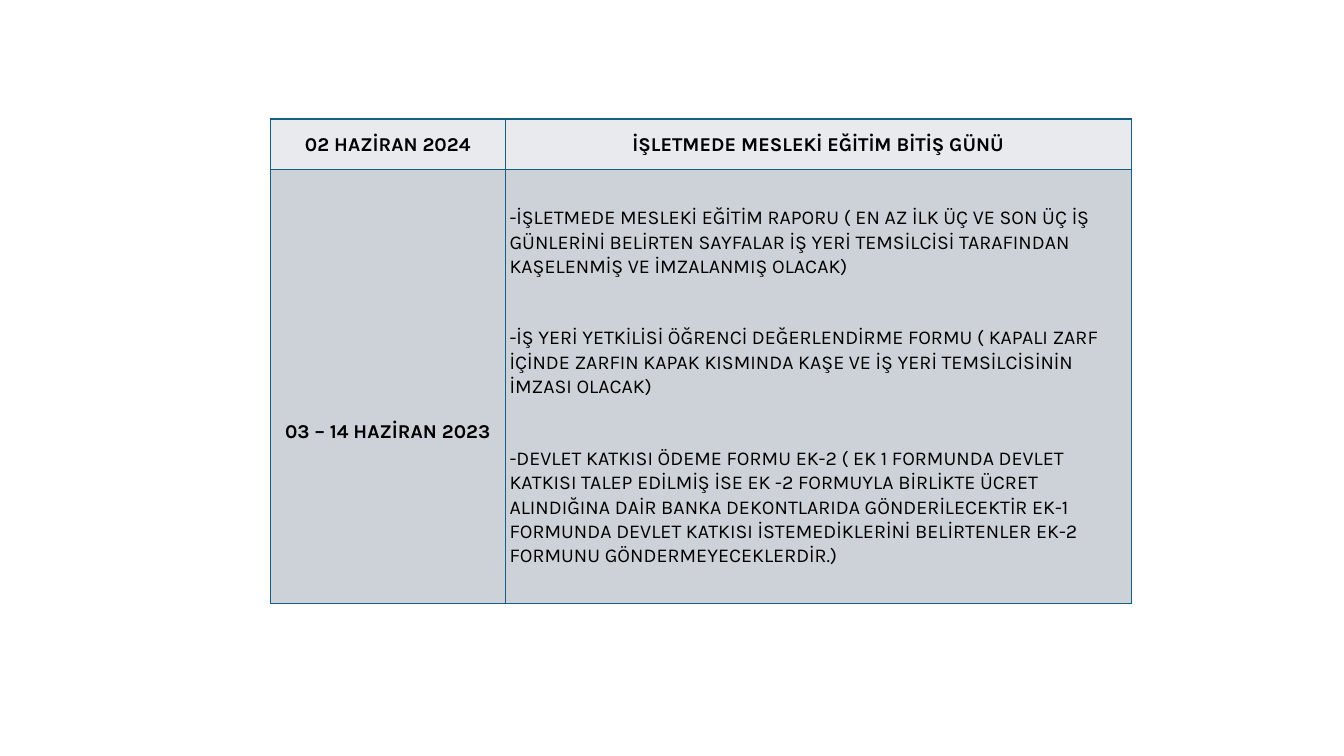
from lxml import etree
from pptx import Presentation
from pptx import util as u
from pptx.dml.color import RGBColor
from pptx.enum import text
from pptx.oxml.ns import qn

BLACK = RGBColor(0x00, 0x00, 0x00)
BORDER = RGBColor(0x15, 0x60, 0x82)
HEADER_FILL = RGBColor(0xE8, 0xEA, 0xED)
BODY_FILL = RGBColor(0xCC, 0xD2, 0xD8)

COLUMN_WIDTHS = (168, 447)
ROW_HEIGHTS = (36, 310)
DATE_TOP = 178.5
DOCUMENTS_TOP = 25.5
DOCUMENT_GAP = 33.5

HEADINGS = ("02 HAZİRAN 2024", "İŞLETMEDE MESLEKİ EĞİTİM BİTİŞ GÜNÜ")
DELIVERY_DATES = "03 – 14 HAZİRAN 2023"
DOCUMENTS = (
    "-İŞLETMEDE MESLEKİ EĞİTİM RAPORU ( EN AZ İLK ÜÇ VE SON ÜÇ İŞ GÜNLERİNİ "
    "BELİRTEN SAYFALAR İŞ YERİ TEMSİLCİSİ TARAFINDAN KAŞELENMİŞ VE İMZALANMIŞ OLACAK)",
    "-İŞ YERİ YETKİLİSİ ÖĞRENCİ DEĞERLENDİRME FORMU ( KAPALI ZARF İÇİNDE ZARFIN "
    "KAPAK KISMINDA KAŞE VE İŞ YERİ TEMSİLCİSİNİN İMZASI OLACAK)",
    "-DEVLET KATKISI ÖDEME FORMU EK-2 ( EK 1 FORMUNDA DEVLET KATKISI TALEP EDİLMİŞ "
    "İSE EK -2 FORMUYLA BİRLİKTE ÜCRET ALINDIĞINA DAİR BANKA DEKONTLARIDA "
    "GÖNDERİLECEKTİR EK-1 FORMUNDA DEVLET KATKISI İSTEMEDİKLERİNİ BELİRTENLER EK-2 "
    "FORMUNU GÖNDERMEYECEKLERDİR.)",
)


class SlideBuilder:
    font_name = "Karla"
    font_size = u.Pt(14)
    line_spacing = 1.07
    side_margin = u.Pt(3)
    border_width = u.Pt(1)

    def __init__(self, slide):
        self.slide = slide

    def table(self, left, top, widths, heights):
        frame = self.slide.shapes.add_table(
            len(heights), len(widths), u.Pt(left), u.Pt(top),
            u.Pt(sum(widths)), u.Pt(sum(heights)))
        table = frame.table
        for column, width in zip(table.columns, widths):
            column.width = u.Pt(width)
        for row, height in zip(table.rows, heights):
            row.height = u.Pt(height)
        return table

    def borders(self, cell):
        properties = cell._tc.get_or_add_tcPr()
        for position, side in enumerate(("a:lnL", "a:lnR", "a:lnT", "a:lnB")):
            line = etree.Element(qn(side), w=str(self.border_width))
            fill = etree.SubElement(line, qn("a:solidFill"))
            etree.SubElement(fill, qn("a:srgbClr"), val=str(BORDER))
            properties.insert(position, line)

    def cell(self, cell, paragraphs, fill, bold=True, top=0, gap=0,
             align=text.PP_ALIGN.CENTER, anchor=text.MSO_ANCHOR.TOP):
        cell.fill.solid()
        cell.fill.fore_color.rgb = fill
        self.borders(cell)
        cell.margin_left = cell.margin_right = self.side_margin
        cell.margin_top, cell.margin_bottom = u.Pt(top), 0
        cell.vertical_anchor = anchor
        cell.text_frame.text = "\n".join(paragraphs)
        for index, paragraph in enumerate(cell.text_frame.paragraphs):
            paragraph.alignment = align
            paragraph.line_spacing = self.line_spacing
            paragraph.space_before = u.Pt(gap if index else 0)
            for run in paragraph.runs:
                run.font.name = self.font_name
                run.font.size = self.font_size
                run.font.bold = bold
                run.font.color.rgb = BLACK


def main():
    presentation = Presentation()
    presentation.slide_width, presentation.slide_height = u.Pt(960), u.Pt(540)
    builder = SlideBuilder(presentation.slides.add_slide(presentation.slide_layouts[6]))

    schedule = builder.table(193, 85, COLUMN_WIDTHS, ROW_HEIGHTS)
    for column, heading in enumerate(HEADINGS):
        builder.cell(schedule.cell(0, column), [heading], HEADER_FILL,
                     anchor=text.MSO_ANCHOR.MIDDLE)
    builder.cell(schedule.cell(1, 0), [DELIVERY_DATES], BODY_FILL, top=DATE_TOP)
    builder.cell(schedule.cell(1, 1), DOCUMENTS, BODY_FILL, bold=False,
                 top=DOCUMENTS_TOP, gap=DOCUMENT_GAP, align=text.PP_ALIGN.LEFT)

    presentation.save("out.pptx")


if __name__ == "__main__":
    main()
